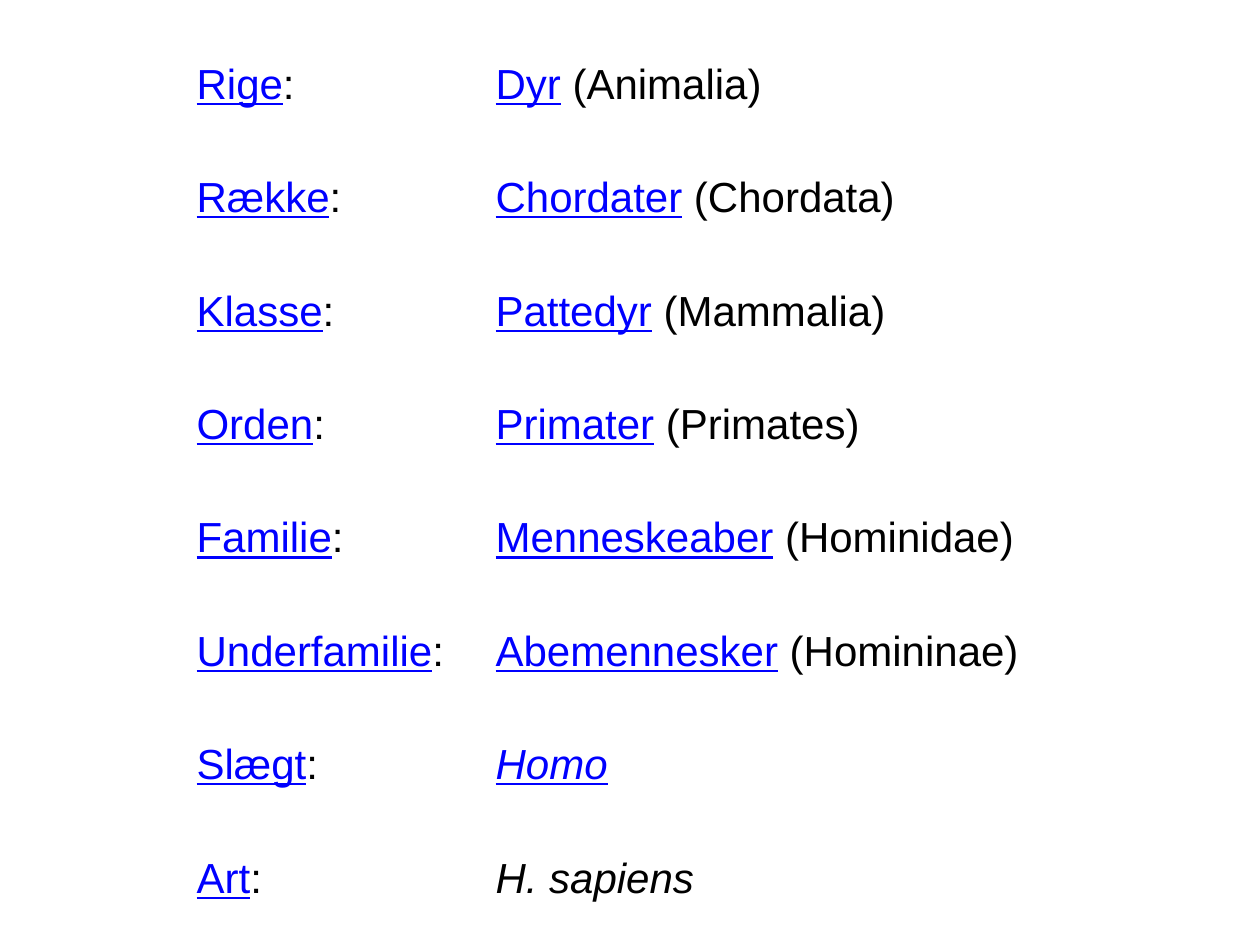
import pptx
import pptx.util
import pptx.dml.color

PX = 914400 / 126
BLUE, BLACK = "0000FF", "000000"

# Rank, linked name, plain name
RANKS = [
    ("Rige", "Dyr", " (Animalia)"),
    ("Række", "Chordater", " (Chordata)"),
    ("Klasse", "Pattedyr", " (Mammalia)"),
    ("Orden", "Primater", " (Primates)"),
    ("Familie", "Menneskeaber", " (Hominidae)"),
    ("Underfamilie", "Abemennesker", " (Homininae)"),
    ("Slægt", "Homo", ""),
    ("Art", "", "H. sapiens"),
]
ITALIC = {"Homo", "H. sapiens"}
LEFT, TOP = 184, 55
COLS = (299, 591)
UPPER, LAST = 794, 63  # height of all rows but the last, and of the last


def emu(px):
    return pptx.util.Emu(round(px * PX))


def color(code):
    return pptx.dml.color.RGBColor.from_string(code)


def write(cell, link, plain):
    cell.fill.background()
    para = cell.text_frame.paragraphs[0]
    para.font.size = pptx.util.Pt(24)
    para.font.name = "Arial"
    for text, code in ((link, BLUE), (plain, BLACK)):
        if text:
            run = para.add_run()
            run.text = text
            run.font.color.rgb = color(code)
            run.font.underline = code == BLUE
            run.font.italic = text in ITALIC


def main():
    deck = pptx.Presentation()
    deck.slide_width, deck.slide_height = emu(1260), emu(945)
    slide = deck.slides.add_slide(deck.slide_layouts[6])

    # Table of ranks
    frame = slide.shapes.add_table(
        len(RANKS), len(COLS), emu(LEFT), emu(TOP),
        emu(sum(COLS)), emu(UPPER + LAST))
    table = frame.table
    table.first_row = table.horz_banding = False
    for col, width in zip(table.columns, COLS):
        col.width = emu(width)
    for row in table.rows:
        row.height = emu(UPPER / (len(RANKS) - 1))
    table.rows[len(RANKS) - 1].height = emu(LAST)

    # Rank on the left, names on the right
    for i, (rank, link, plain) in enumerate(RANKS):
        write(table.cell(i, 0), rank, ":")
        write(table.cell(i, 1), link, plain)

    deck.save("out.pptx")


if __name__ == "__main__":
    main()
